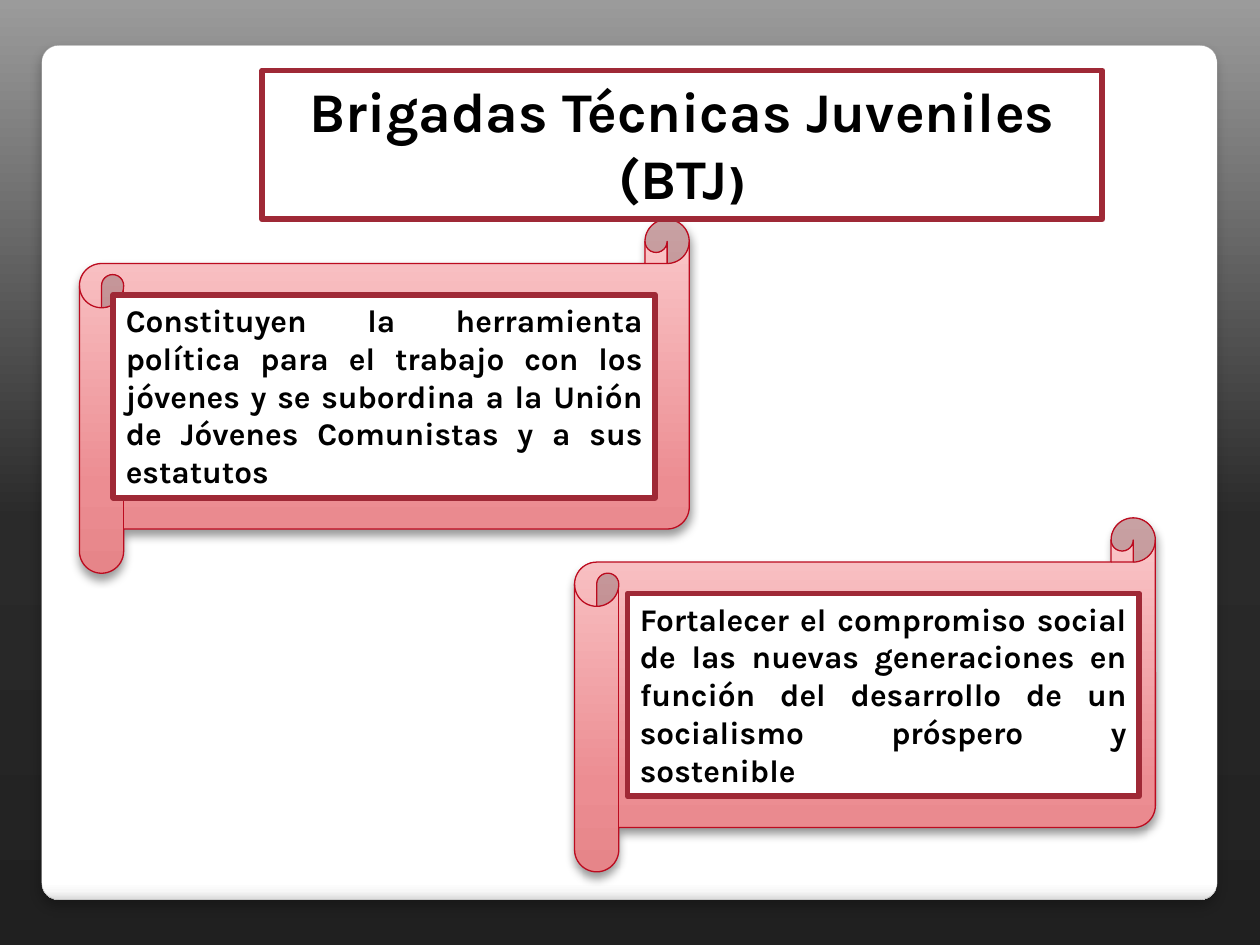
"""Build the slide on the Brigadas Técnicas Juveniles."""
from dataclasses import dataclass
from typing import Any, NamedTuple

from lxml.etree import SubElement
from pptx import Presentation
from pptx.dml.color import RGBColor
from pptx.enum.shapes import MSO_SHAPE
from pptx.enum.text import MSO_ANCHOR, MSO_AUTO_SIZE, PP_ALIGN
from pptx.oxml.ns import qn
from pptx.util import Pt

Stops = tuple[tuple[int, str], ...]


class Box(NamedTuple):
    left: float
    top: float
    width: float
    height: float


class Shade(NamedTuple):
    alpha: int
    blur: float
    dist: float


class Run(NamedTuple):
    text: str
    size: float
    font: str


class Panel(NamedTuple):
    box: Box
    kind: MSO_SHAPE
    stops: Stops
    angle: int
    edge: str
    width: float
    shade: Shade


class Label(NamedTuple):
    box: Box
    align: PP_ALIGN
    runs: tuple[Run, ...]


@dataclass(frozen=True)
class Theme:
    back: Stops = ((0, "202020"), (45, "2A2A2A"), (100, "9B9B9B"))
    card: Stops = ((0, "FFFFFF"), (98, "FFFFFF"), (99, "F7F7F7"), (100, "DADADA"))
    scroll: Stops = ((0, "E68589"), (25, "EC8D92"), (100, "FBCACC"))
    rim: str = "A4A4A4"
    red: str = "BC0B1F"
    frame: str = "9F2936"
    paper: str = "FFFFFF"
    ink: str = "000000"
    font: str = "Karla"
    other: str = "DejaVu Sans"
    title: float = 32
    close: float = 24
    body: float = 18


THEME = Theme()
UP, DOWN = 90, 270


def apply(target: Any, values: dict[str, Any]) -> None:
    """Set each format value on the target."""
    for name, value in values.items():
        setattr(target, name, value)


def blend(fill: Any, host: Any, stops: Stops, angle: int) -> None:
    """Give a fill a linear gradient with any number of stops."""
    fill.gradient()
    fill.gradient_angle = angle
    group = next(host.iter(qn("a:gsLst")))
    group.clear()
    for place, color in stops:
        stop = SubElement(group, qn("a:gs"), pos=str(place * 1000))
        SubElement(stop, qn("a:srgbClr"), val=color)


def outline(shape: Any, color: str, width: float) -> None:
    """Set the line of a shape."""
    shape.line.color.rgb = RGBColor.from_string(color)
    shape.line.width = Pt(width)


def place(slide: Any, kind: MSO_SHAPE, box: Box) -> Any:
    """Add a preset shape without a shadow."""
    shape = slide.shapes.add_shape(kind, *map(Pt, box))
    shape.shadow.inherit = False
    return shape


def shadow(shape: Any, shade: Shade) -> None:
    """Cast a soft black shadow straight down."""
    group = next(shape.element.iter(qn("a:effectLst")))
    outer = SubElement(group, qn("a:outerShdw"), blurRad=str(Pt(shade.blur)),
                       dist=str(Pt(shade.dist)), dir="5400000", rotWithShape="0")
    color = SubElement(outer, qn("a:srgbClr"), val="000000")
    SubElement(color, qn("a:alpha"), val=str(shade.alpha * 1000))


def draw_panel(slide: Any, panel: Panel) -> Any:
    """Draw a shaded gradient panel."""
    shape = place(slide, panel.kind, panel.box)
    blend(shape.fill, shape.element, panel.stops, panel.angle)
    outline(shape, panel.edge, panel.width)
    shadow(shape, panel.shade)
    return shape


def draw_label(slide: Any, label: Label) -> None:
    """Draw a framed text box."""
    shape = place(slide, MSO_SHAPE.RECTANGLE, label.box)
    shape.fill.solid()
    shape.fill.fore_color.rgb = RGBColor.from_string(THEME.paper)
    outline(shape, THEME.frame, 3.35)
    frame = shape.text_frame
    apply(frame, {"word_wrap": True, "vertical_anchor": MSO_ANCHOR.TOP,
                  "auto_size": MSO_AUTO_SIZE.SHAPE_TO_FIT_TEXT})
    para = frame.paragraphs[0]
    para.alignment = label.align
    for item in label.runs:
        run = para.add_run()
        run.text = item.text
        apply(run.font, {"size": Pt(item.size), "name": item.font, "bold": True})
        run.font.color.rgb = RGBColor.from_string(THEME.ink)


def scroll(box: Box) -> Panel:
    """Describe a red scroll."""
    return Panel(box, MSO_SHAPE.HORIZONTAL_SCROLL, THEME.scroll, UP,
                 THEME.red, 0.75, Shade(40, 5.2, 3))


def note(box: Box, text: str) -> Label:
    """Describe a justified note."""
    return Label(box, PP_ALIGN.JUSTIFY, (Run(text, THEME.body, THEME.font),))


CARD = Panel(Box(23.8, 25.9, 671.8, 488.2), MSO_SHAPE.ROUNDED_RECTANGLE,
             THEME.card, DOWN, THEME.rim, 0.16, Shade(25, 6, 4))
SCROLLS = (
    scroll(Box(328.3, 295.9, 331.9, 202.3)),
    scroll(Box(45.4, 125.3, 348.5, 202.3)),
)
LABELS = (
    Label(Box(149.8, 40.3, 480.2, 85), PP_ALIGN.CENTER, (
        Run("Brigadas Técnicas Juveniles (BTJ", THEME.title, THEME.font),
        Run(")", THEME.close, THEME.other),
    )),
    note(Box(64.8, 168.5, 309.6, 115.9),
         "Constituyen la herramienta política para el trabajo con los jóvenes "
         "y se subordina a la Unión de Jóvenes Comunistas y a sus estatutos"),
    note(Box(358.6, 339.1, 292.3, 115.9),
         "Fortalecer el compromiso social de las nuevas generaciones en función "
         "del desarrollo de un socialismo próspero y sostenible"),
)


def main() -> None:
    """Build and save the slide."""
    deck = Presentation()
    apply(deck, {"slide_width": Pt(720), "slide_height": Pt(540)})
    slide = deck.slides.add_slide(deck.slide_layouts[6])
    blend(slide.background.fill, slide.element, THEME.back, UP)
    draw_panel(slide, CARD).adjustments[0] = 0.02
    for panel in SCROLLS:
        draw_panel(slide, panel)
    for label in LABELS:
        draw_label(slide, label)
    deck.save("out.pptx")


if __name__ == "__main__":
    main()
